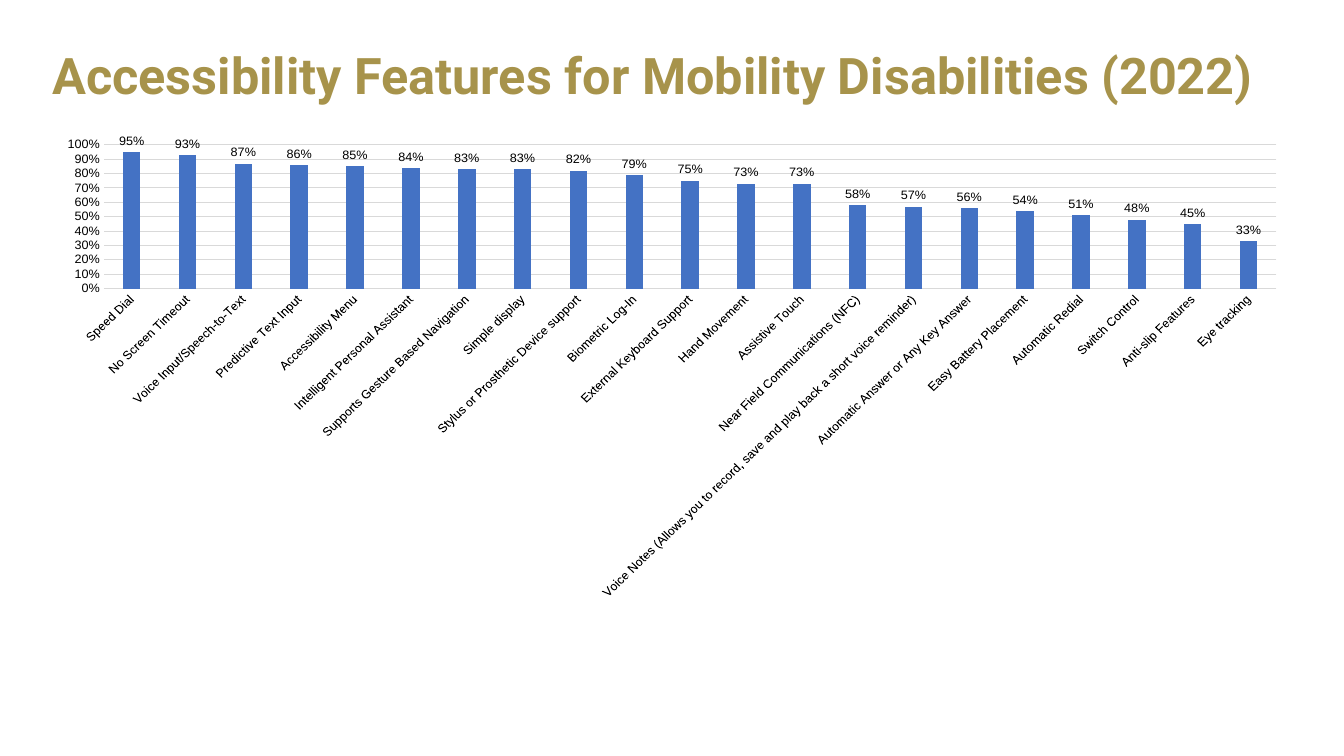
import pptx
import pptx.chart.data
import pptx.dml.color
import pptx.enum.chart
import pptx.enum.text
import pptx.util

SLIDE_WIDTH = pptx.util.Inches(13.33)
SLIDE_HEIGHT = pptx.util.Inches(7.5)
GOLD, BLUE, BLACK, GRID_GREY = "A7934B", "4472C4", "000000", "D9D9D9"

FEATURE_SHARES = {
    "Speed Dial": 0.95,
    "No Screen Timeout": 0.93,
    "Voice Input/Speech-to-Text": 0.87,
    "Predictive Text Input": 0.86,
    "Accessibility Menu": 0.85,
    "Intelligent Personal Assistant": 0.84,
    "Supports Gesture Based Navigation": 0.83,
    "Simple display": 0.83,
    "Stylus or Prosthetic Device support": 0.82,
    "Biometric Log-In": 0.79,
    "External Keyboard Support": 0.75,
    "Hand Movement": 0.73,
    "Assistive Touch": 0.73,
    "Near Field Communications (NFC)": 0.58,
    "Voice Notes (Allows you to record, save and play back a short voice reminder)": 0.57,
    "Automatic Answer or Any Key Answer": 0.56,
    "Easy Battery Placement": 0.54,
    "Automatic Redial": 0.51,
    "Switch Control": 0.48,
    "Anti-slip Features": 0.45,
    "Eye tracking": 0.33,
}


def color(hex_value):
    return pptx.dml.color.RGBColor.from_string(hex_value)


def set_font(font, name, size, hex_value, bold=False):
    font.name = name
    font.size = pptx.util.Pt(size)
    font.bold = bold
    font.color.rgb = color(hex_value)


def set_line(line, hex_value):
    line.color.rgb = color(hex_value)
    line.width = pptx.util.Pt(0.75)


def add_title(slide, box, wording):
    frame = slide.shapes.add_textbox(*box).text_frame
    frame.word_wrap = True
    frame.vertical_anchor = pptx.enum.text.MSO_ANCHOR.MIDDLE
    heading = frame.paragraphs[0]
    heading.text = wording
    heading.line_spacing = 0.9
    set_font(heading.font, "Roboto", 36, GOLD, bold=True)


def style_axes(chart):
    features, shares = chart.category_axis, chart.value_axis
    for axis in (features, shares):
        axis.major_tick_mark = pptx.enum.chart.XL_TICK_MARK.NONE
        axis.minor_tick_mark = pptx.enum.chart.XL_TICK_MARK.NONE
        set_font(axis.tick_labels.font, "Arial", 9, BLACK)
    set_line(features.format.line, GRID_GREY)
    # Slant the feature names upwards by 45 degrees.
    features.tick_labels.font  # ensures the text properties exist
    features._element.txPr.bodyPr.set("rot", "-2700000")

    shares.minimum_scale, shares.maximum_scale, shares.major_unit = 0, 1, 0.1
    shares.tick_labels.number_format = "0%"
    shares.tick_labels.number_format_is_linked = False
    shares.format.line.fill.background()
    set_line(shares.major_gridlines.format.line, GRID_GREY)


def style_bars(plot):
    plot.gap_width = 219
    plot.overlap = -27
    plot.vary_by_categories = False
    bars = plot.series[0]
    bars.invert_if_negative = False
    bars.format.fill.solid()
    bars.format.fill.fore_color.rgb = color(BLUE)
    labels = bars.data_labels
    labels.show_value = True
    labels.number_format = "0%"
    labels.number_format_is_linked = False
    labels.position = pptx.enum.chart.XL_LABEL_POSITION.OUTSIDE_END
    set_font(labels.font, "Arial", 9, BLACK)


def add_feature_chart(slide, box, feature_shares):
    data = pptx.chart.data.CategoryChartData(number_format="0%")
    data.categories = list(feature_shares)
    data.add_series("Series 1", feature_shares.values())
    chart = slide.shapes.add_chart(
        pptx.enum.chart.XL_CHART_TYPE.COLUMN_CLUSTERED, *box, data).chart
    chart.has_title = False
    chart.has_legend = False
    set_font(chart.font, "Arial", 10, BLACK)
    style_axes(chart)
    style_bars(chart.plots[0])


def main():
    presentation = pptx.Presentation()
    presentation.slide_width = SLIDE_WIDTH
    presentation.slide_height = SLIDE_HEIGHT
    slide = presentation.slides.add_slide(presentation.slide_layouts[6])

    margin = pptx.util.Inches(0.42)
    content_width = SLIDE_WIDTH - 2 * margin
    title_top = pptx.util.Inches(0.22)
    chart_top = pptx.util.Inches(1.33)
    chart_height = pptx.util.Inches(4.62)
    add_title(slide, (margin, title_top, content_width, chart_top - title_top),
              "Accessibility Features for Mobility Disabilities (2022)")
    add_feature_chart(slide, (margin, chart_top, content_width, chart_height),
                      FEATURE_SHARES)
    presentation.save("out.pptx")


if __name__ == "__main__":
    main()
